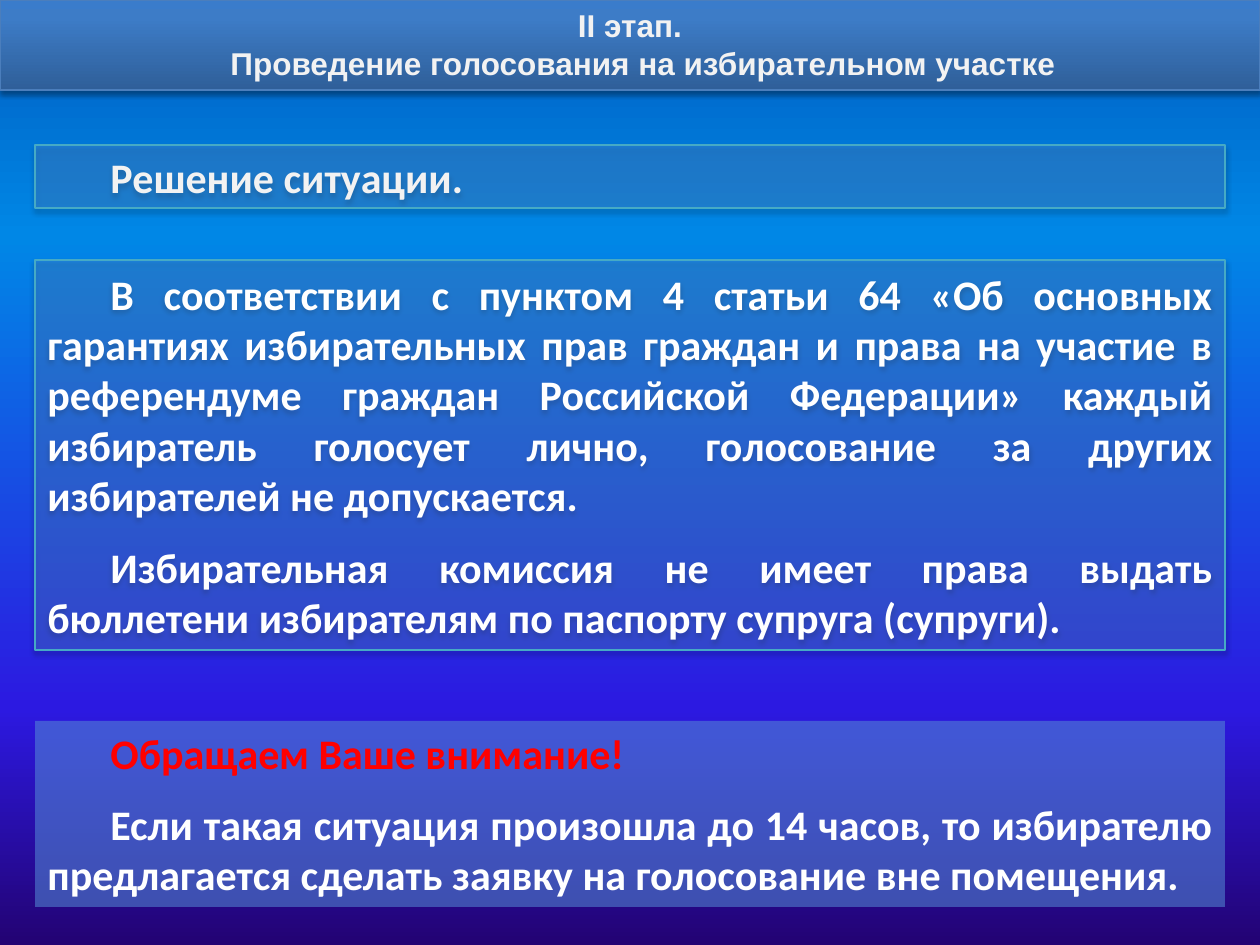
from copy import deepcopy

from lxml import etree
from pptx import Presentation
from pptx.dml.color import RGBColor
from pptx.enum.shapes import MSO_SHAPE
from pptx.enum.text import MSO_ANCHOR, MSO_AUTO_SIZE, PP_ALIGN
from pptx.oxml.ns import qn
from pptx.util import Pt

RECT = MSO_SHAPE.RECTANGLE
TOP, MIDDLE = MSO_ANCHOR.TOP, MSO_ANCHOR.MIDDLE
CENTER, JUSTIFY = PP_ALIGN.CENTER, PP_ALIGN.JUSTIFY
GROW = MSO_AUTO_SIZE.SHAPE_TO_FIT_TEXT

WHITE = RGBColor(0xFF, 0xFF, 0xFF)
OFF_WHITE = RGBColor(0xF2, 0xF2, 0xF2)
RED = RGBColor(0xFF, 0x00, 0x00)
BLACK = RGBColor(0x00, 0x00, 0x00)
PANEL = RGBColor(0x55, 0x8E, 0xD5)
PANEL_LINE = RGBColor(0x46, 0xAA, 0xC5)
HEADER_LINE = RGBColor(0x4B, 0x7E, 0xBC)
BACKGROUND_STOPS = [
    (0, RGBColor(0x23, 0x03, 0x73)),
    (25, RGBColor(0x2C, 0x19, 0xE1)),
    (75, RGBColor(0x00, 0x87, 0xE6)),
    (100, RGBColor(0x00, 0x5C, 0xBF)),
]
HEADER_STOPS = [
    (0, RGBColor(0x2F, 0x5F, 0x99)),
    (80, RGBColor(0x3D, 0x7C, 0xC7)),
    (100, RGBColor(0x3A, 0x7C, 0xCB)),
]

PX_PER_INCH = 126
PANEL_LEFT, PANEL_WIDTH = 35, 1190
INDENT = 63


def px(n):
    return round(n * 914400 / PX_PER_INCH)


def add_color(parent, color, alpha):
    clr = etree.SubElement(parent, qn("a:srgbClr"), val=str(color))
    etree.SubElement(clr, qn("a:alpha"), val=str(alpha * 1000))


def set_gradient(fill, element, stops):
    fill.gradient()
    fill.gradient_angle = 90
    gs_list = element.find(".//" + qn("a:gsLst"))
    while len(gs_list) < len(stops):
        gs_list.append(deepcopy(gs_list[0]))
    for gs, (position, color) in zip(fill.gradient_stops, stops):
        gs.position = position / 100
        gs.color.rgb = color


def add_shadow(sp):
    effects = sp.element.spPr.find(qn("a:effectLst"))
    shadow = etree.SubElement(
        effects, qn("a:outerShdw"), blurRad=str(Pt(3.1)), dist=str(Pt(1.8)),
        dir="5400000", rotWithShape="0")
    add_color(shadow, BLACK, 35)


def add_box(s, left, top, width, height, line, anchor):
    sp = s.shapes.add_shape(RECT, px(left), px(top), px(width), px(height))
    sp.shadow.inherit = False
    if line is None:
        sp.line.fill.background()
    else:
        sp.line.color.rgb = line
        sp.line.width = Pt(0.75)
        add_shadow(sp)
    tf = sp.text_frame
    tf.word_wrap = True
    tf.auto_size = GROW
    tf.vertical_anchor = anchor
    return sp


def add_text(tf, index, text, align, font, size, color):
    p = tf.add_paragraph() if index else tf.paragraphs[0]
    p.text = text
    p.alignment = align
    p.font.name = font
    p.font.size = Pt(size)
    p.font.bold = True
    p.font.color.rgb = color
    return p


def add_header(s, lines):
    sp = add_box(s, 0, 0, 1260, 90, HEADER_LINE, TOP)
    set_gradient(sp.fill, sp.element, HEADER_STOPS)
    for i, (text, margin) in enumerate(lines):
        p = add_text(sp.text_frame, i, text, CENTER, "Arial", 18, OFF_WHITE)
        p._p.get_or_add_pPr().set("marL", str(px(margin)))


def add_panel(s, top, height, alpha, line, anchor, paragraphs):
    sp = add_box(s, PANEL_LEFT, top, PANEL_WIDTH, height, line, anchor)
    sp.fill.solid()
    sp.fill.fore_color.rgb = PANEL
    clr = sp.element.spPr.find(qn("a:solidFill"))[0]
    etree.SubElement(clr, qn("a:alpha"), val=str(alpha * 1000))
    for i, (text, color) in enumerate(paragraphs):
        p = add_text(sp.text_frame, i, text, JUSTIFY, "Calibri", 24, color)
        p._p.get_or_add_pPr().set("indent", str(px(INDENT)))
        if i:
            p.space_before = Pt(6)
        if len(paragraphs) > 1:
            p.space_after = Pt(6)


def main():
    prs = Presentation()
    prs.slide_width, prs.slide_height = px(1260), px(945)
    s = prs.slides.add_slide(prs.slide_layouts[6])
    set_gradient(s.background.fill, s.element, BACKGROUND_STOPS)

    add_header(s, [
        ("II\u00a0этап.".replace("\u00a0", " "), 0),
        ("Проведение голосования на избирательном участке", 26),
    ])
    add_panel(s, 260, 390, 33, PANEL_LINE, MIDDLE, [
        ("В соответствии с пунктом 4 статьи 64 «Об основных гарантиях "
         "избирательных прав граждан и права на участие в референдуме "
         "граждан Российской Федерации» каждый избиратель голосует лично, "
         "голосование за других избирателей не допускается.", WHITE),
        ("Избирательная комиссия не имеет права выдать бюллетени "
         "избирателям по паспорту супруга (супруги).", WHITE),
    ])
    add_panel(s, 145, 63, 33, PANEL_LINE, MIDDLE, [
        ("Решение ситуации.", OFF_WHITE),
    ])
    add_panel(s, 721, 186, 54, None, TOP, [
        ("Обращаем Ваше внимание!", RED),
        ("Если такая ситуация произошла до 14 часов, то избирателю "
         "предлагается сделать заявку на голосование вне помещения.", WHITE),
    ])
    prs.save("out.pptx")


if __name__ == "__main__":
    main()
